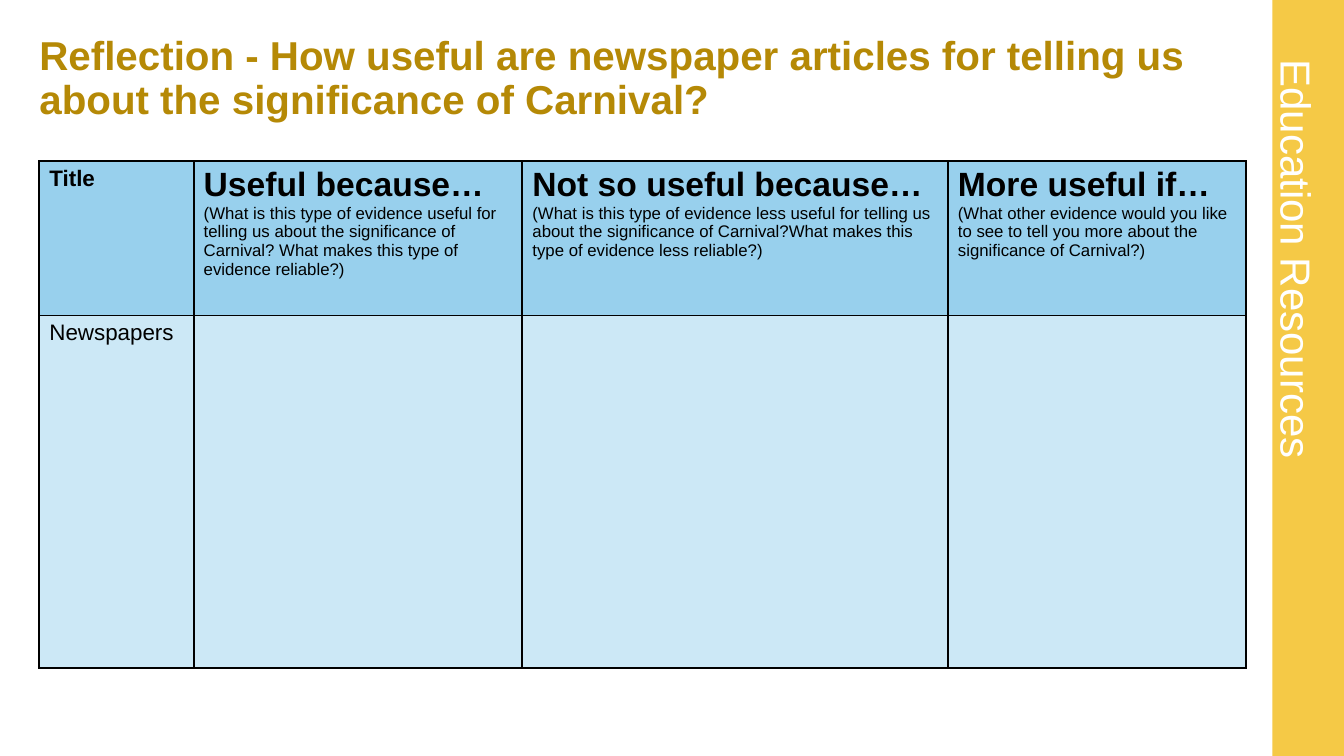
from lxml import etree
from pptx import Presentation
from pptx import util as u
from pptx.dml.color import RGBColor
from pptx.enum import shapes, text
from pptx.oxml import ns

WIDTH, HEIGHT = u.Inches(13.33), u.Inches(7.5)
FONT = "Arial"
GOLD, DARK_GOLD, WHITE, BLACK = "F5C946", "B58906", "FFFFFF", "000000"
HEADER_BLUE, PALE_BLUE = "98D0ED", "CCE8F6"

# Table grid, in percent of the slide's width and height
COLUMNS = [11.48, 24.46, 31.66, 22.21]
ROWS = [20.4, 46.67]

# Each cell holds (heading, size, bold, question)
HEADER = [
    ("Title", 16, True, ""),
    ("Useful because…", 24, True,
     "(What is this type of evidence useful for telling us about the significance "
     "of Carnival? What makes this type of evidence reliable?)"),
    ("Not so useful because…", 24, True,
     "(What is this type of evidence less useful for telling us about the significance "
     "of Carnival?What makes this type of evidence less reliable?)"),
    ("More useful if…", 24, True,
     "(What other evidence would you like to see to tell you more about the "
     "significance of Carnival?)"),
]
EVIDENCE = [("Newspapers", 16, False, "")]


def colour(hex_code):
    return RGBColor.from_string(hex_code)


def across(percent):
    return round(WIDTH * percent / 100)


def down(percent):
    return round(HEIGHT * percent / 100)


def area(left, top, width, height):
    """Turn shares of the slide into a position and size."""
    return across(left), down(top), across(width), down(height)


def write(paragraph, words, size, bold=False, hex_code=BLACK,
          align=text.PP_ALIGN.LEFT, spacing=None):
    paragraph.alignment = align
    paragraph.line_spacing = spacing
    run = paragraph.add_run()
    run.text = words
    run.font.name = FONT
    run.font.size = u.Pt(size)
    run.font.bold = bold
    run.font.color.rgb = colour(hex_code)


def set_margins(frame, left, top, right, bottom):
    frame.margin_left, frame.margin_top = u.Inches(left), u.Inches(top)
    frame.margin_right, frame.margin_bottom = u.Inches(right), u.Inches(bottom)


def add_side_strip(slide):
    strip = slide.shapes.add_shape(shapes.MSO_SHAPE.RECTANGLE,
                                   *area(94.67, 0, 5.33, 100))
    strip.shadow.inherit = False
    strip.fill.solid()
    strip.fill.fore_color.rgb = colour(GOLD)
    strip.line.fill.background()


def add_side_label(slide, words):
    label = slide.shapes.add_textbox(*area(83.05, 29.47, 30.08, 9.6))
    label.rotation = 90
    frame = label.text_frame
    frame.word_wrap = True
    frame.auto_size = text.MSO_AUTO_SIZE.SHAPE_TO_FIT_TEXT
    set_margins(frame, 0, 0, 0, 0)
    write(frame.paragraphs[0], words, 30, hex_code=WHITE,
          align=text.PP_ALIGN.CENTER, spacing=u.Pt(58.8))


def fill_title(slide, words):
    title = slide.shapes.title
    title.left, title.top, title.width, title.height = area(2.93, 5.33, 90.25, 10.4)
    frame = title.text_frame
    frame.word_wrap = True
    frame.auto_size = text.MSO_AUTO_SIZE.NONE
    frame.vertical_anchor = text.MSO_ANCHOR.MIDDLE
    set_margins(frame, 0, 0.05, 0.1, 0.05)
    write(frame.paragraphs[0], words, 28.8, bold=True, hex_code=DARK_GOLD, spacing=0.9)


def add_borders(cell, hex_code, points):
    properties = cell._tc.get_or_add_tcPr()
    for position, side in enumerate(("a:lnL", "a:lnR", "a:lnT", "a:lnB")):
        line = etree.Element(ns.qn(side), w=str(u.Pt(points)))
        fill = etree.SubElement(line, ns.qn("a:solidFill"))
        etree.SubElement(fill, ns.qn("a:srgbClr"), val=hex_code)
        properties.insert(position, line)


def fill_cell(cell, heading, size, bold, question):
    frame = cell.text_frame
    write(frame.paragraphs[0], heading, size, bold=bold)
    if question:
        write(frame.add_paragraph(), question, 12)


def add_evidence_table(slide):
    table = slide.shapes.add_table(
        len(ROWS), len(COLUMNS), *area(2.93, 21.33, sum(COLUMNS), sum(ROWS))).table
    table.horz_banding = False
    for column, share in zip(table.columns, COLUMNS):
        column.width = across(share)
    for row, share, fill in zip(table.rows, ROWS, (HEADER_BLUE, PALE_BLUE)):
        row.height = down(share)
        for cell in row.cells:
            cell.fill.solid()
            cell.fill.fore_color.rgb = colour(fill)
            add_borders(cell, BLACK, 1.5)
    for row, contents in zip(table.rows, (HEADER, EVIDENCE)):
        for cell, content in zip(row.cells, contents):
            fill_cell(cell, *content)


def main():
    presentation = Presentation()
    presentation.slide_width, presentation.slide_height = WIDTH, HEIGHT
    slide = presentation.slides.add_slide(presentation.slide_layouts[5])

    # Side banner
    add_side_strip(slide)
    add_side_label(slide, "Education Resources")

    # Question and table
    fill_title(slide, "Reflection - How useful are newspaper articles for telling us "
                      "about the significance of Carnival?")
    add_evidence_table(slide)

    presentation.save("out.pptx")


if __name__ == "__main__":
    main()
